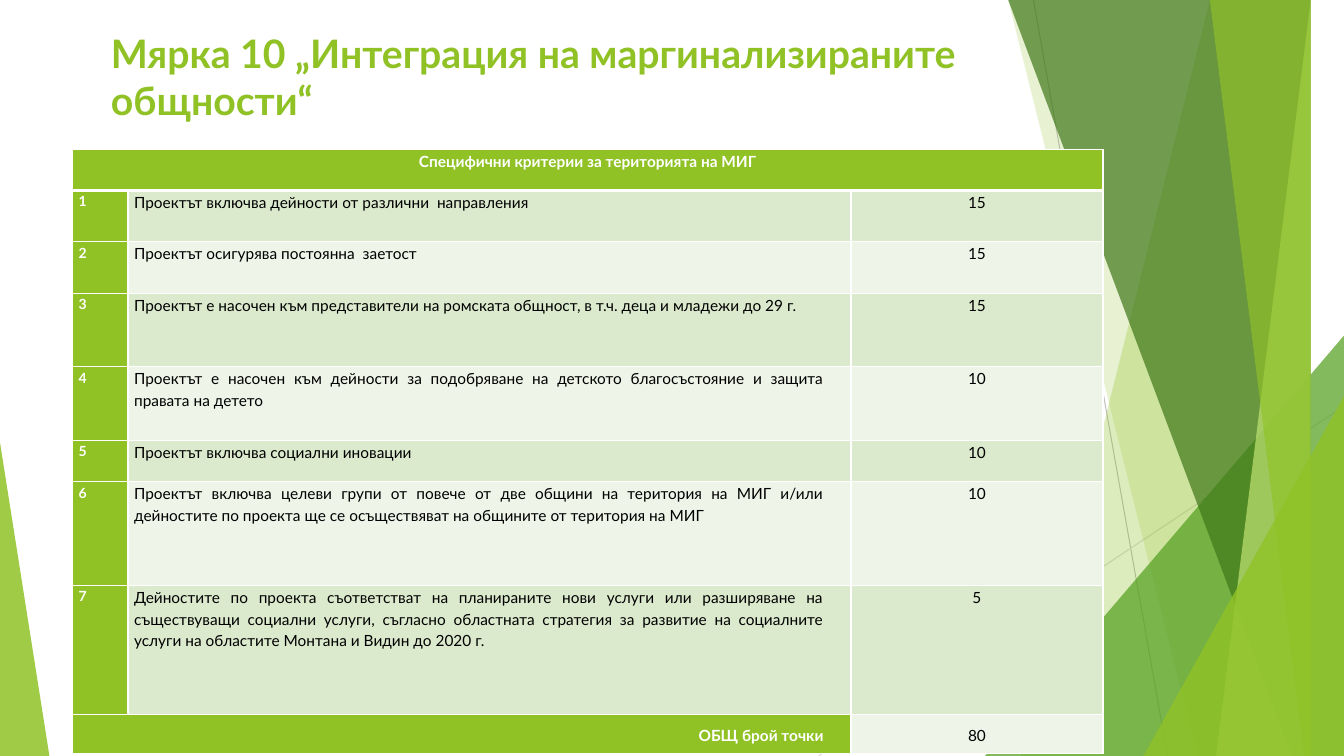
from lxml import etree
from pptx import Presentation
from pptx import util as u
from pptx.dml.color import RGBColor
from pptx.enum import shapes, text
from pptx.oxml.ns import qn

GREEN, WHITE, BLACK = "90C226", "FFFFFF", "000000"
BANDS = ["DBE9CD", "EEF4E8"]
LEFT, CENTER, RIGHT, JUSTIFY = (text.PP_ALIGN.LEFT, text.PP_ALIGN.CENTER,
                                text.PP_ALIGN.RIGHT, text.PP_ALIGN.JUSTIFY)
CRITERIA = [
    ("Проектът включва дейности от различни  направления", 15, 0.51),
    ("Проектът осигурява постоянна  заетост", 15, 0.51),
    ("Проектът е насочен към представители на ромската общност, в т.ч. деца и "
     "младежи до 29 г.", 15, 0.73),
    ("Проектът е насочен към дейности за подобряване на детското благосъстояние и "
     "защита правата на детето", 10, 0.73),
    ("Проектът включва социални иновации", 10, 0.41),
    ("Проектът включва целеви групи от повече от две общини на територия на МИГ "
     "и/или дейностите по проекта ще се осъществяват на общините от територия на МИГ",
     10, 1.03),
    ("Дейностите по проекта съответстват на планираните нови услуги или разширяване "
     "на съществуващи социални услуги, съгласно областната стратегия за развитие на "
     "социалните услуги на областите Монтана и Видин до 2020 г.", 5, 1.28),
]


def color(value):
    return RGBColor.from_string(value)


def write(frame, words, size=11, ink=BLACK, bold=False, align=LEFT, spacing=1.15):
    paragraph = frame.paragraphs[0]
    paragraph.alignment = align
    paragraph.line_spacing = spacing
    run = paragraph.add_run()
    run.text = words
    run.font.name = "Lato"
    run.font.size = u.Pt(size)
    run.font.bold = bold
    run.font.color.rgb = color(ink)


def paint(facet, fill, opacity):
    facet.shadow.inherit = False
    facet.line.fill.background()
    facet.fill.solid()
    facet.fill.fore_color.rgb = color(fill)
    tint = facet.fill._xPr.find(qn("a:solidFill"))[0]
    etree.SubElement(tint, qn("a:alpha")).set("val", str(opacity * 1000))


def add_ray(slide, start, end, ink):
    ray = slide.shapes.add_connector(shapes.MSO_CONNECTOR.STRAIGHT,
                                     *map(u.Inches, start + end))
    ray.line.color.rgb = color(ink)
    ray.line.width = u.Pt(0.75)
    etree.SubElement(ray._element.spPr, qn("a:effectLst"))


def add_shard(slide, box, top_left, bottom_left, fill, opacity):
    _, top, right, bottom = box
    builder = slide.shapes.build_freeform(top_left, top, scale=u.Inches(1))
    builder.add_line_segments([(right, top), (right, bottom), (bottom_left, bottom)],
                              close=True)
    paint(builder.convert_to_shape(), fill, opacity)


def add_corner(slide, box, apex, fill, opacity):
    corner = slide.shapes.add_shape(shapes.MSO_SHAPE.ISOSCELES_TRIANGLE,
                                    *map(u.Inches, box))
    corner.adjustments[0] = apex
    paint(corner, fill, opacity)


def add_facets(slide, box):
    _, _, right, bottom = box
    add_ray(slide, (10.25, 0), (11.58, bottom), "BFBFBF")
    add_ray(slide, (right, 4.03), (8.12, bottom), "D9D9D9")
    add_shard(slide, box, 12.28, 10.04, GREEN, 30)
    add_shard(slide, box, 10.5, 11.83, GREEN, 20)
    add_corner(slide, (9.77, 3.33, right - 9.77, bottom - 3.33), 1, "54A021", 72)
    add_shard(slide, box, 10.21, 12.91, "3F7819", 70)
    add_shard(slide, box, 13.03, 11.92, "C0E474", 70)
    add_shard(slide, box, 11.96, 13.18, GREEN, 65)
    add_corner(slide, (11.34, 3.93, right - 11.34, bottom - 3.93), 1, GREEN, 80)
    add_corner(slide, (0, 4.39, 0.49, bottom - 4.39), 0, GREEN, 85)


def add_heading(slide, box):
    heading = slide.shapes.title
    heading.left, heading.top, heading.width, heading.height = map(u.Inches, box)
    frame = heading.text_frame
    frame.word_wrap = True
    frame.auto_size = text.MSO_AUTO_SIZE.NONE
    frame.vertical_anchor = text.MSO_ANCHOR.TOP
    write(frame, "Мярка 10 „Интеграция на маргинализираните общности“",
          size=28, ink=GREEN, bold=True, spacing=1.0)
    heading.element.getparent().append(heading.element)


def fill_cell(cell, fill, words="", inset_right=0.06, anchor=text.MSO_ANCHOR.TOP, **style):
    cell.margin_left, cell.margin_right = u.Inches(0.06), u.Inches(inset_right)
    cell.margin_top = cell.margin_bottom = 0
    cell.vertical_anchor = anchor
    cell.fill.solid()
    cell.fill.fore_color.rgb = color(fill)
    if words:
        write(cell.text_frame, words, **style)


def add_borders(cell, top=1, bottom=1):
    properties = cell._tc.get_or_add_tcPr()
    for side, points in zip("LRTB", (1, 1, top, bottom)):
        edge = etree.SubElement(properties, qn(f"a:ln{side}"), w=str(u.Pt(points)))
        solid = etree.SubElement(edge, qn("a:solidFill"))
        etree.SubElement(solid, qn("a:srgbClr"), val=WHITE)


def add_criteria(slide, box):
    heights = [0.41] + [height for _, _, height in CRITERIA] + [0.39]
    last = len(heights) - 1
    table = slide.shapes.add_table(len(heights), 3, *map(u.Inches, box)).table
    for column, width in zip(table.columns, (0.55, 7.17, 2.5)):
        column.width = u.Inches(width)
    for index, height in enumerate(heights):
        table.rows[index].height = u.Inches(height)
        for cell in table.rows[index].cells:
            add_borders(cell, top=3 if index == 1 else 1, bottom=1 if index else 3)

    table.cell(0, 0).merge(table.cell(0, 2))
    fill_cell(table.cell(0, 0), GREEN, "Специфични критерии за територията на МИГ",
              ink=WHITE, bold=True, align=CENTER)
    for number, (criterion, points, _) in enumerate(CRITERIA, 1):
        band = BANDS[(number - 1) % 2]
        fill_cell(table.cell(number, 0), GREEN, str(number), size=10, ink=WHITE, bold=True)
        fill_cell(table.cell(number, 1), band, criterion, inset_right=0.27, align=JUSTIFY)
        fill_cell(table.cell(number, 2), band, str(points), align=CENTER)

    table.cell(last, 0).merge(table.cell(last, 1))
    fill_cell(table.cell(last, 0), GREEN, "ОБЩ брой точки", inset_right=0.27,
              anchor=text.MSO_ANCHOR.MIDDLE, ink=WHITE, bold=True, align=RIGHT)
    fill_cell(table.cell(last, 2), BANDS[1], str(sum(points for _, points, _ in CRITERIA)),
              anchor=text.MSO_ANCHOR.MIDDLE, align=CENTER)


def main():
    deck = Presentation()
    deck.slide_width, deck.slide_height = u.Inches(13.33), u.Inches(7.5)
    slide = deck.slides.add_slide(deck.slide_layouts[5])
    add_facets(slide, (0, -0.01, 13.33, 7.5))
    add_heading(slide, (1, 0.24, 9.92, 1.19))
    add_criteria(slide, (0.72, 1.48, 10.22, 6.02))
    deck.save("out.pptx")


if __name__ == "__main__":
    main()
